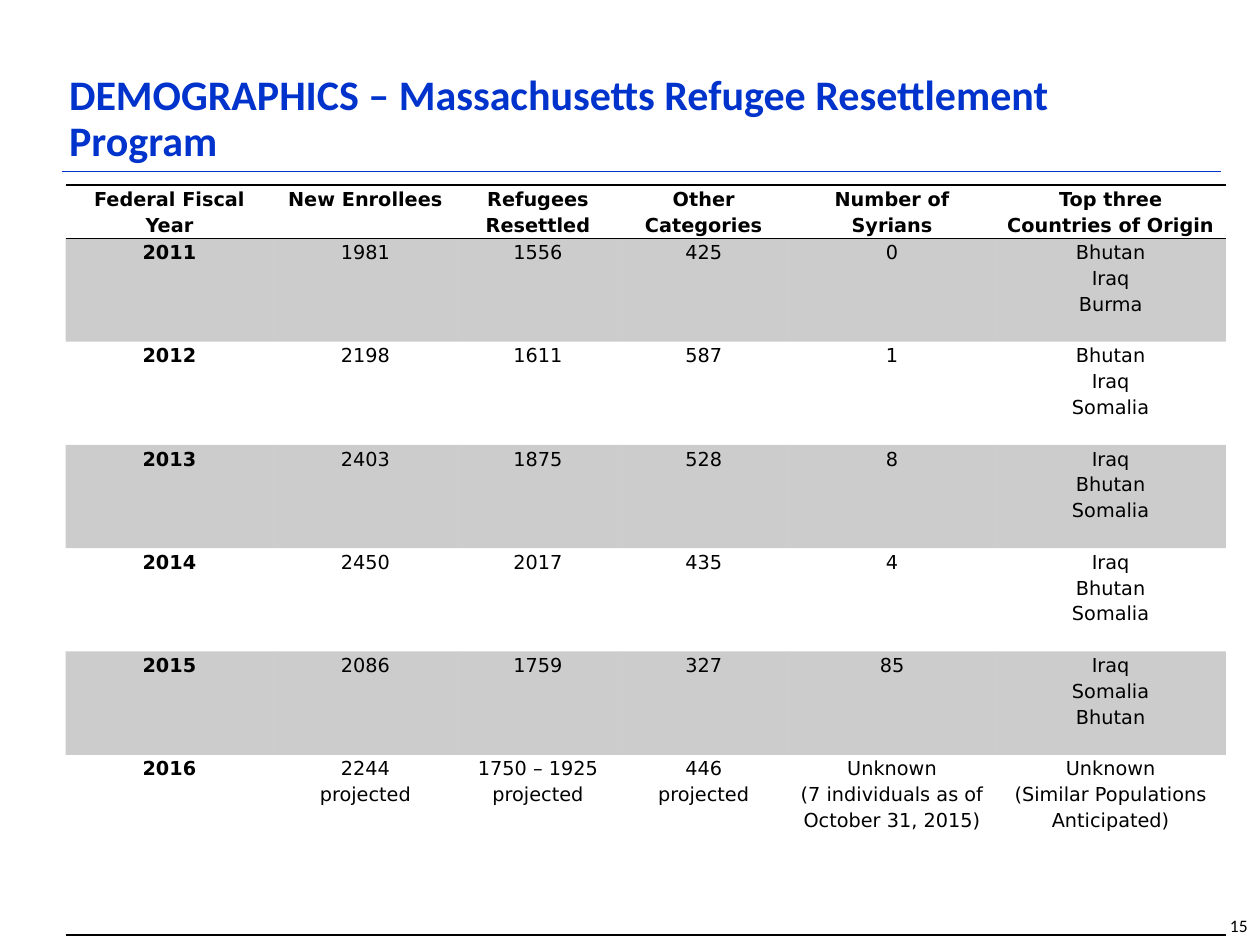
from dataclasses import dataclass

from lxml import etree
from pptx import Presentation
from pptx import util as u
from pptx.dml.color import RGBColor
from pptx.enum import shapes, text
from pptx.oxml import ns
from pptx.slide import Slide

COLORS = {"blue": "0033CC", "black": "000000"}
NO_STYLE = "{2D5ABB26-0587-4C30-8999-92F81FD0307C}"
BAND_OPACITY = 20

COLUMN_WIDTHS = [1.65, 1.46, 1.28, 1.35, 1.64, 1.83]
ROW_HEIGHTS = [0.41] + [0.82] * 5 + [1.43]
ROWS = [
    ["Federal Fiscal Year", "New Enrollees", "Refugees Resettled",
     "Other Categories", "Number of Syrians", "Top three Countries of Origin"],
    ["2011", "1981", "1556", "425", "0", "Bhutan\nIraq\nBurma"],
    ["2012", "2198", "1611", "587", "1", "Bhutan\nIraq\nSomalia"],
    ["2013", "2403", "1875", "528", "8", "Iraq\nBhutan\nSomalia"],
    ["2014", "2450", "2017", "435", "4", "Iraq\nBhutan\nSomalia"],
    ["2015", "2086", "1759", "327", "85", "Iraq\nSomalia\nBhutan"],
    ["2016", "2244\nprojected", "1750 – 1925\nprojected", "446\nprojected",
     "Unknown\n(7 individuals as of October 31, 2015)",
     "Unknown\n(Similar Populations Anticipated)"],
]


def add_element(parent, tag, **attributes):
    return etree.SubElement(parent, ns.qn(tag), **attributes)


@dataclass
class SlideBuilder:
    slide: Slide
    heading_font: str = "Calibri"
    table_font: str = "DejaVu Sans"
    table_size: float = 11

    def add_lines(self, frame, content, font, size, color="black", bold=False,
                  align=text.PP_ALIGN.LEFT, spacing=1.0):
        """Fill a text frame with one paragraph for each line of content."""
        frame.word_wrap = True
        for index, line in enumerate(content.split("\n")):
            paragraph = frame.add_paragraph() if index else frame.paragraphs[0]
            paragraph.alignment = align
            paragraph.line_spacing = spacing
            run = paragraph.add_run()
            run.text = line
            run.font.name = font
            run.font.size = u.Pt(size)
            run.font.bold = bold
            run.font.color.rgb = RGBColor.from_string(COLORS[color])

    def text_box(self, left, top, width, height, content, size,
                 anchor=text.MSO_ANCHOR.TOP, **style):
        box = self.slide.shapes.add_textbox(
            u.Inches(left), u.Inches(top), u.Inches(width), u.Inches(height))
        box.text_frame.vertical_anchor = anchor
        self.add_lines(box.text_frame, content, self.heading_font, size, **style)

    def rule(self, left, right, y, color, weight):
        line = self.slide.shapes.add_connector(
            shapes.MSO_CONNECTOR.STRAIGHT,
            u.Inches(left), u.Inches(y), u.Inches(right), u.Inches(y))
        line.line.color.rgb = RGBColor.from_string(COLORS[color])
        line.line.width = u.Pt(weight)
        add_element(line._element.spPr, "a:effectLst")

    def border(self, cell, side, color="black", weight=1):
        line = add_element(cell._tc.get_or_add_tcPr(), f"a:ln{side}", w=str(u.Pt(weight)))
        fill = add_element(line, "a:solidFill")
        add_element(fill, "a:srgbClr", val=COLORS[color])

    def fill_cell(self, cell, banded):
        if not banded:
            cell.fill.background()
            return
        cell.fill.solid()
        cell.fill.fore_color.rgb = RGBColor.from_string(COLORS["black"])
        color = cell._tc.tcPr.find(ns.qn("a:solidFill") + "/" + ns.qn("a:srgbClr"))
        add_element(color, "a:alpha", val=str(BAND_OPACITY * 1000))

    def table(self, left, top, rows, widths, heights):
        frame = self.slide.shapes.add_table(
            len(rows), len(widths), u.Inches(left), u.Inches(top),
            u.Inches(sum(widths)), u.Inches(sum(heights)))
        table = frame.table
        table.horz_banding = False
        table.first_row = False
        table._tbl.tblPr.find(ns.qn("a:tableStyleId")).text = NO_STYLE
        for column, width in zip(table.columns, widths):
            column.width = u.Inches(width)
        last = len(rows) - 1
        for i, values in enumerate(rows):
            table.rows[i].height = u.Inches(heights[i])
            for j, value in enumerate(values):
                cell = table.cell(i, j)
                cell.margin_left = cell.margin_right = u.Inches(0.07)
                cell.margin_top = cell.margin_bottom = 0
                if i == 0:
                    self.border(cell, "T")
                if i in (0, last):
                    self.border(cell, "B")
                self.fill_cell(cell, banded=i % 2 == 1)
                self.add_lines(cell.text_frame, value, self.table_font, self.table_size,
                               bold=i == 0 or j == 0, align=text.PP_ALIGN.CENTER,
                               spacing=1.15)


def main():
    presentation = Presentation()
    presentation.slide_width = u.Inches(10)
    presentation.slide_height = u.Inches(7.5)
    builder = SlideBuilder(presentation.slides.add_slide(presentation.slide_layouts[6]))

    builder.rule(0.49, 9.69, 1.36, "blue", 0.75)
    builder.text_box(0.45, 0.05, 8.46, 1.31,
                     "DEMOGRAPHICS – Massachusetts Refugee Resettlement Program", 24,
                     anchor=text.MSO_ANCHOR.BOTTOM, color="blue", bold=True, spacing=0.9)
    builder.table(0.52, 1.47, ROWS, COLUMN_WIDTHS, ROW_HEIGHTS)
    builder.text_box(7.89, 7.21, 2.11, 0.29, "15", 10, align=text.PP_ALIGN.RIGHT)

    presentation.save("out.pptx")


if __name__ == "__main__":
    main()
